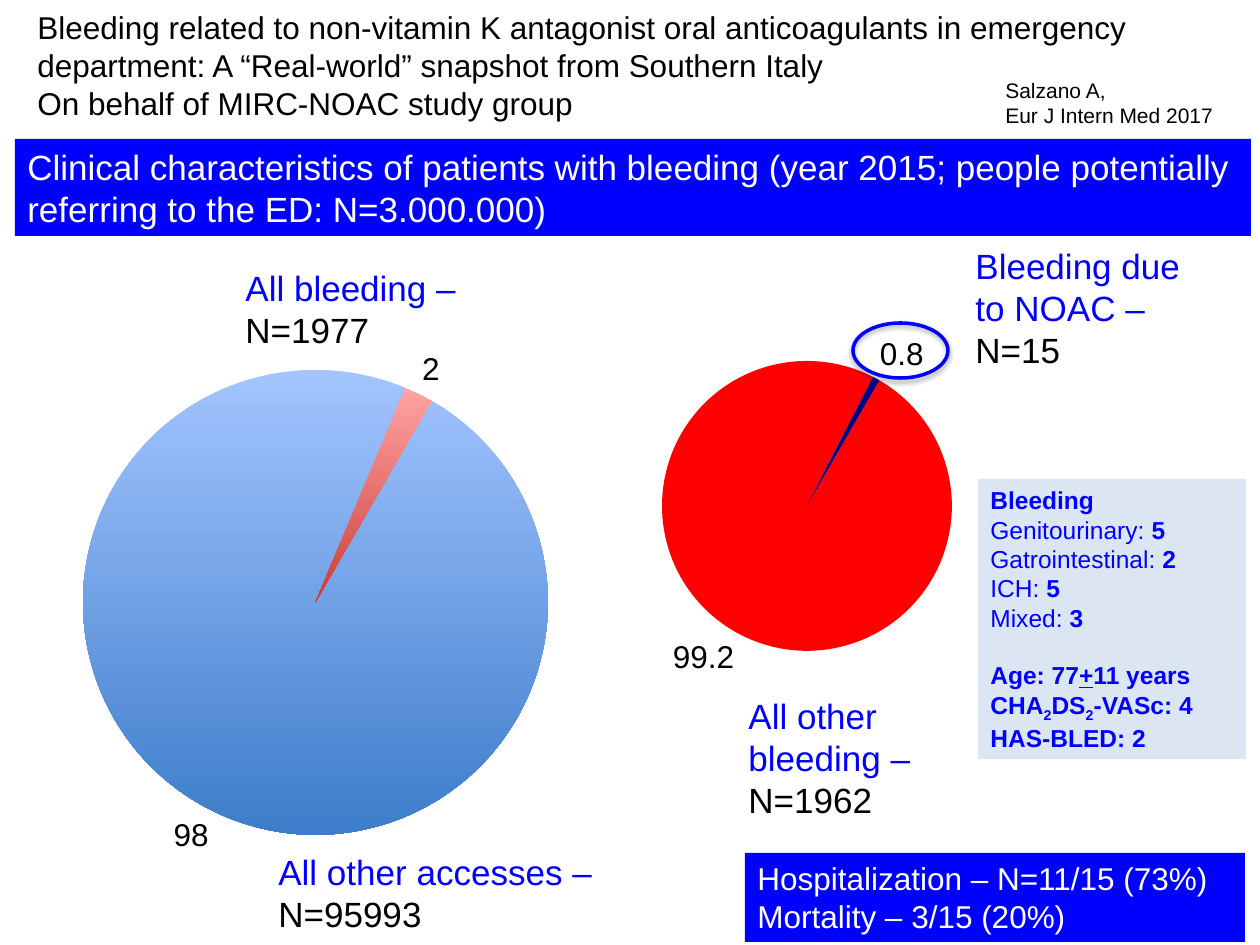
from lxml import etree
from pptx import Presentation
from pptx.chart.data import CategoryChartData
from pptx.dml.color import RGBColor
from pptx.enum.chart import XL_CHART_TYPE, XL_LABEL_POSITION
from pptx.enum.shapes import MSO_SHAPE
from pptx.enum.text import MSO_ANCHOR, PP_ALIGN
from pptx.oxml import parse_xml
from pptx.oxml.ns import nsdecls, qn
from pptx.util import Pt

PIE = XL_CHART_TYPE.PIE
OUTSIDE = XL_LABEL_POSITION.OUTSIDE_END
RECT, OVAL = MSO_SHAPE.RECTANGLE, MSO_SHAPE.OVAL
TOP, LEFT = MSO_ANCHOR.TOP, PP_ALIGN.LEFT

PX = 914400 / 126
FONT = "Arial"
BLUE, BLACK, WHITE, PALE = "0000FF", "000000", "FFFFFF", "DCE6F2"

PIES = [
    {"box": (25, 323, 582, 559), "pie": (83, 370, 465, 465), "values": (98, 2),
     "fills": (("A3C4FF", "3D7DCA"), ("FFA3A1", "CB3D3A"))},
    {"box": (575, 311, 449, 391), "pie": (662, 361, 290, 290), "values": (99.2, 0.8),
     "fills": (("FF0000",), ("000080",))},
]

PIE_LABELS = [
    ((233, 260, 257, 97), "All bleeding – ", "N=1977"),
    ((266, 844, 341, 97), "All other accesses – ", "N=95993"),
    ((963, 238, 257, 140), "Bleeding due to NOAC – ", "N=15"),
    ((736, 688, 257, 140), "All other bleeding – ", "N=1962"),
]

BOLD, UNDER, SUB = {"bold": True}, {"bold": True, "underline": True}, {"bold": True, "sub": True}
SITES = [("Genitourinary", 5), ("Gatrointestinal", 2), ("ICH", 5), ("Mixed", 3)]
DETAILS = [
    [("Bleeding", BOLD)],
    *[[(f"{site}: ", {}), (str(count), BOLD)] for site, count in SITES],
    [("Age: 77", BOLD), ("+", UNDER), ("11 years", BOLD)],
    [("CHA", BOLD), ("2", SUB), ("DS", BOLD), ("2", SUB), ("-VASc: 4", BOLD)],
    [("HAS-BLED: 2", BOLD)],
]
AGE_ROW = 1 + len(SITES)

PANELS = [
    ((939, 853, 500, 89), 18, ["Hospitalization – N=11/15 (73%)", "Mortality – 3/15 (20%)"]),
    ((15, 139, 1236, 97), 20,
     ["Clinical characteristics of patients with bleeding (year 2015; "
      "people potentially referring to the ED: N=3.000.000)"]),
]
PANELS[0] = ((745, 853, 500, 89), *PANELS[0][1:])

NOTES = [
    ((25, 2, 1221, 127), 18,
     ["Bleeding related to non-vitamin K antagonist oral anticoagulants in emergency "
      "department: A “Real-world” snapshot from Southern Italy",
      "On behalf of MIRC-NOAC study group"]),
    ((993, 71, 252, 63), 12, ["Salzano A,", "Eur J Intern Med 2017"]),
]


def emu(box):
    return [round(v * PX) for v in box]


def rgb(value):
    return RGBColor.from_string(value)


def plain(lines):
    return [[(line, {})] for line in lines]


def write(sp, paragraphs, size, color):
    tf = sp.text_frame
    tf.word_wrap = True
    tf.vertical_anchor = TOP
    for i, runs in enumerate(paragraphs):
        p = tf.add_paragraph() if i else tf.paragraphs[0]
        p.alignment = LEFT
        p.font.name, p.font.size = FONT, Pt(size)
        p.font.color.rgb = rgb(color)
        for text, style in runs:
            r = p.add_run()
            r.text = text
            if style.get("bold"):
                r.font.bold = True
            if style.get("underline"):
                r.font.underline = True
            if style.get("sub"):
                r._r.get_or_add_rPr().set("baseline", "-25000")
            if "color" in style:
                r.font.color.rgb = rgb(style["color"])
    return tf


def add_text(s, box, paragraphs, size, color):
    return write(s.shapes.add_textbox(*emu(box)), paragraphs, size, color)


def add_panel(s, box, fill, paragraphs, size, color):
    sp = s.shapes.add_shape(RECT, *emu(box))
    sp.shadow.inherit = False
    sp.fill.solid()
    sp.fill.fore_color.rgb = rgb(fill)
    sp.line.fill.background()
    return write(sp, paragraphs, size, color)


def paint(fill, colors):
    if len(colors) == 1:
        fill.solid()
        fill.fore_color.rgb = rgb(colors[0])
        return
    fill.gradient()
    fill.gradient_angle = 270
    for stop, color in zip(fill.gradient_stops, colors):
        stop.color.rgb = rgb(color)


def place_plot(chart, box, pie):
    area = chart._chartSpace.chart.plotArea
    for old in area.findall(qn("c:layout")):
        area.remove(old)
    layout = parse_xml(f"<c:layout {nsdecls('c')}/>")
    manual = etree.SubElement(layout, qn("c:manualLayout"))
    settings = [
        ("layoutTarget", "inner"), ("xMode", "edge"), ("yMode", "edge"),
        ("x", (pie[0] - box[0]) / box[2]), ("y", (pie[1] - box[1]) / box[3]),
        ("w", pie[2] / box[2]), ("h", pie[3] / box[3]),
    ]
    for tag, value in settings:
        etree.SubElement(manual, qn(f"c:{tag}")).set("val", str(value))
    area.insert(0, layout)


def add_pie(s, box, pie, values, fills):
    data = CategoryChartData()
    data.categories = ["1", "2"]
    data.add_series("Series 1", values)
    chart = s.shapes.add_chart(PIE, *emu(box), data).chart
    chart.has_legend = chart.has_title = False
    chart.font.name, chart.font.size = "Calibri", Pt(18)
    chart.font.color.rgb = rgb(BLACK)
    plot = chart.plots[0]
    plot.vary_by_categories = True
    for i, colors in enumerate(fills):
        point = plot.series[0].points[i]
        paint(point.format.fill, colors)
        point.format.line.fill.background()
    labels = plot.series[0].data_labels
    labels.show_value = True
    labels.position = OUTSIDE
    labels.font.name, labels.font.size = FONT, Pt(18)
    labels.font.color.rgb = rgb(BLACK)
    pie_xml = plot._element
    for old in pie_xml.findall(qn("c:firstSliceAng")):
        pie_xml.remove(old)
    etree.SubElement(pie_xml, qn("c:firstSliceAng")).set("val", "30")
    place_plot(chart, box, pie)


def add_ring(s, box):
    sp = s.shapes.add_shape(OVAL, *emu(box))
    sp.fill.background()
    sp.line.color.rgb = rgb(BLUE)
    sp.line.width = Pt(2)
    sp.shadow.inherit = False
    effects = sp._element.spPr.find(qn("a:effectLst"))
    effects.append(parse_xml(
        f'<a:outerShdw {nsdecls("a")} blurRad="40000" dist="23000" dir="5400000" rotWithShape="0">'
        '<a:srgbClr val="000000"><a:alpha val="35000"/></a:srgbClr></a:outerShdw>'))


def main():
    prs = Presentation()
    prs.slide_width, prs.slide_height = emu((1260, 945))
    s = prs.slides.add_slide(prs.slide_layouts[6])
    for pie in PIES:
        add_pie(s, **pie)
    for box, label, count in PIE_LABELS:
        add_text(s, box, [[(label, {"color": BLUE}), (count, {"color": BLACK})]], 20, BLACK)
    tf = add_panel(s, (978, 479, 268, 280), PALE, DETAILS, 14, BLUE)
    tf.paragraphs[AGE_ROW].space_before = Pt(16)
    for box, size, lines in PANELS:
        add_panel(s, box, BLUE, plain(lines), size, WHITE)
    for box, size, lines in NOTES:
        add_text(s, box, plain(lines), size, BLACK)
    add_ring(s, (853, 323, 95, 55))
    prs.save("out.pptx")


if __name__ == "__main__":
    main()
